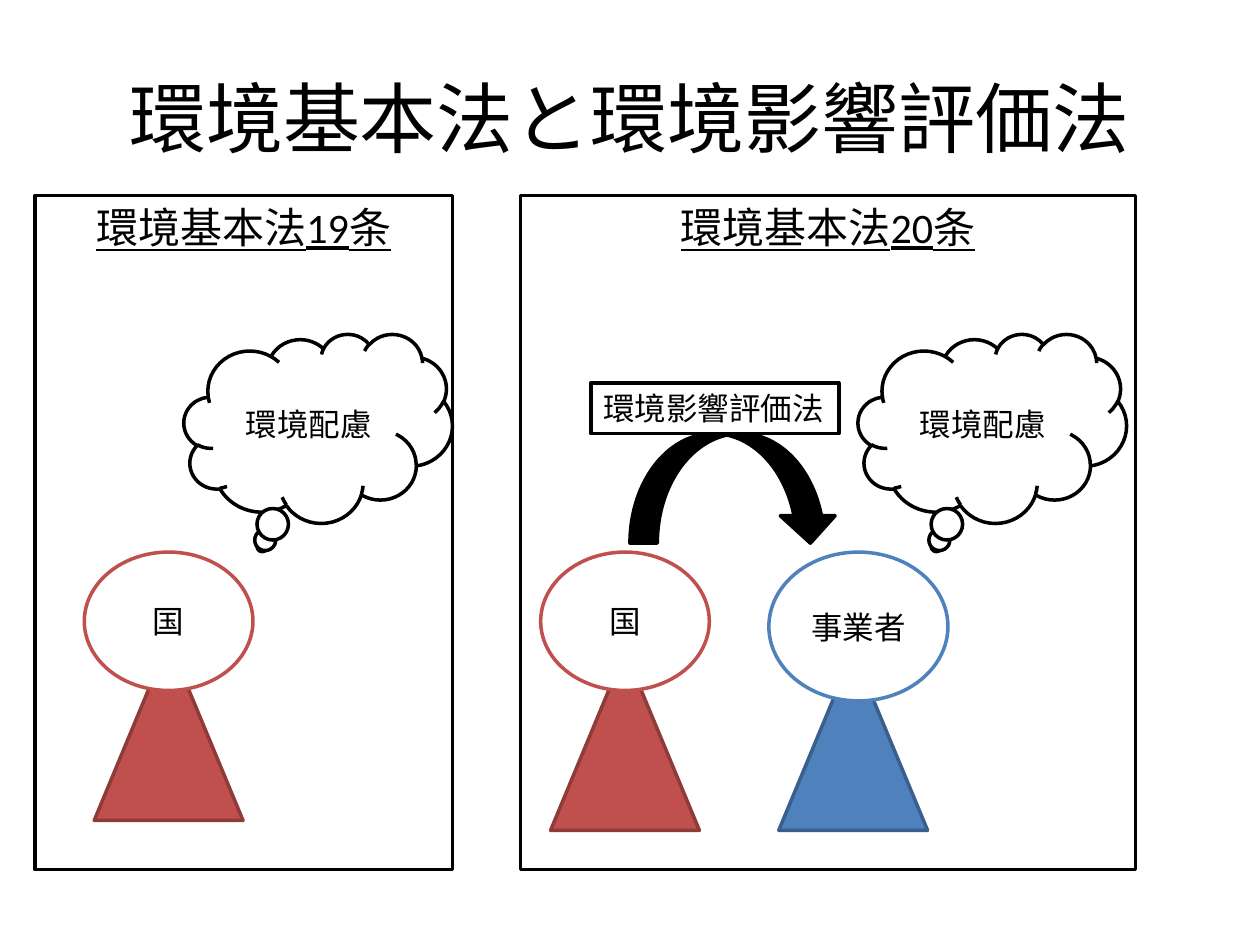
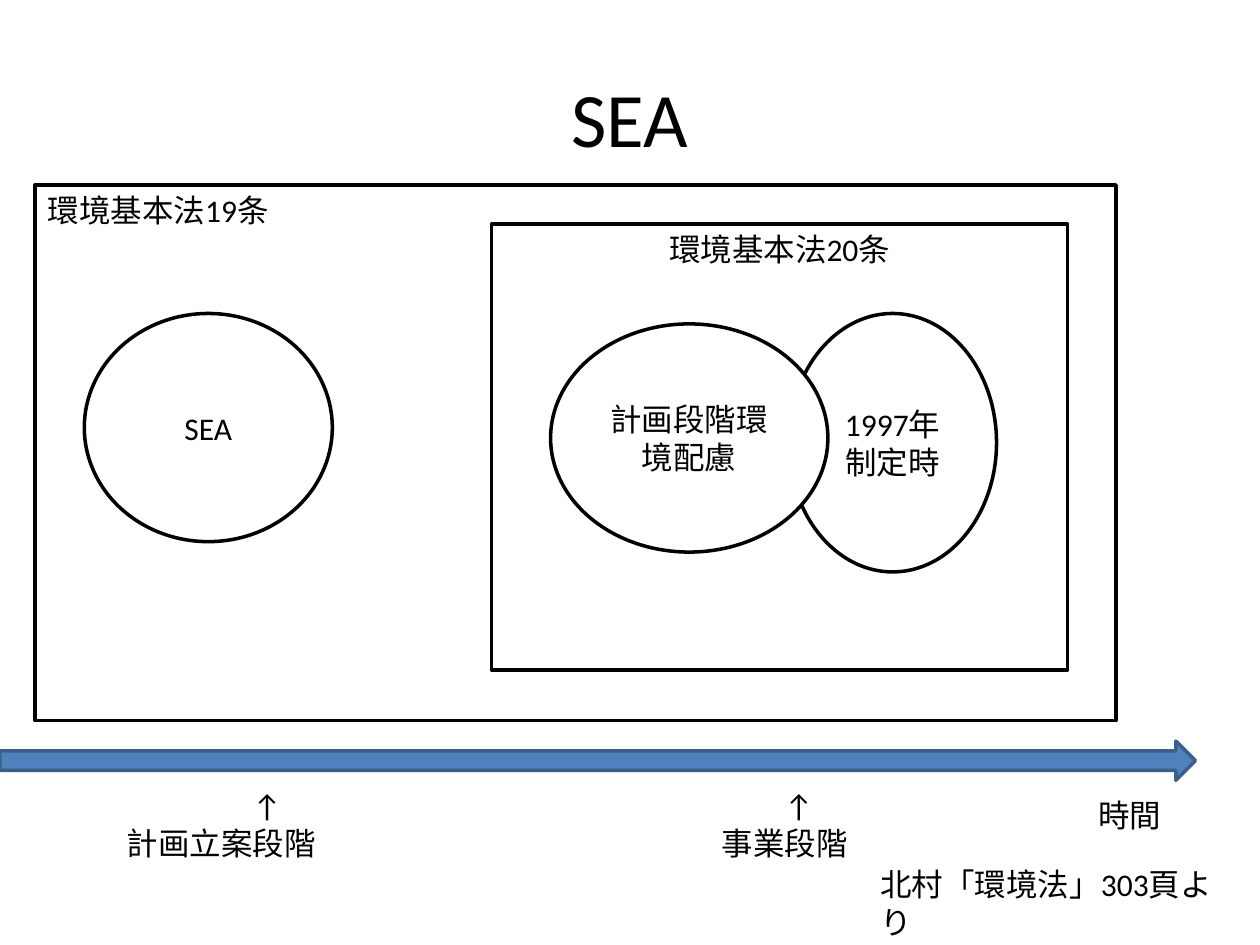
from pptx import Presentation
from pptx import util as u
from pptx.dml.color import RGBColor
from pptx.enum import shapes, text

Cm = u.Cm
Kind = shapes.MSO_SHAPE

# Shared colours and text style
BLACK = RGBColor(0x00, 0x00, 0x00)
WHITE = RGBColor(0xFF, 0xFF, 0xFF)
RED = RGBColor(0xC0, 0x50, 0x4D)
DARK_RED = RGBColor(0x8E, 0x3B, 0x39)
BLUE = RGBColor(0x4F, 0x81, 0xBD)
DARK_BLUE = RGBColor(0x3A, 0x5F, 0x8C)
FONT = "Calibri"

CENTER, LEFT = text.PP_ALIGN.CENTER, text.PP_ALIGN.LEFT
TOP, MIDDLE = text.MSO_ANCHOR.TOP, text.MSO_ANCHOR.MIDDLE
GROW = text.MSO_AUTO_SIZE.SHAPE_TO_FIT_TEXT


def write(sp, lines, size=18, align=CENTER, underline=None, **frame):
    """Fill a text frame, one paragraph per line."""
    tf = sp.text_frame
    frame = {"word_wrap": True, "vertical_anchor": MIDDLE} | frame
    for name, value in frame.items():
        setattr(tf, name, value)
    style = {"name": FONT, "size": u.Pt(size), "underline": underline}
    for i, line in enumerate(lines):
        p = tf.paragraphs[0] if i == 0 else tf.add_paragraph()
        p.alignment = align
        r = p.add_run()
        r.text = line
        for name, value in style.items():
            setattr(r.font, name, value)
        r.font.color.rgb = BLACK
    return tf


def add_shape(s, kind, box, fill=WHITE, line=BLACK):
    """Add a flat preset shape; fill=None leaves it see-through."""
    sp = s.shapes.add_shape(kind, *map(Cm, box))
    sp.shadow.inherit = False
    if fill is None:
        sp.fill.background()
    else:
        sp.fill.solid()
        sp.fill.fore_color.rgb = fill
    sp.line.color.rgb = line
    sp.line.width = u.Pt(2)
    return sp


def add_text(s, box, *lines, **style):
    sp = s.shapes.add_textbox(*map(Cm, box))
    return write(sp, lines, **style)


def add_note(s, box, *lines):
    return add_text(s, box, *lines, align=LEFT, vertical_anchor=TOP, auto_size=GROW)


def add_stage(s, x, width, label, indent):
    """Timeline label under an indented up arrow."""
    tf = add_note(s, (x, 15.72, width, 1.8), "↑", label)
    tf.paragraphs[0]._p.get_or_add_pPr().set("marL", str(Cm(indent)))


def add_panel(s, box, heading, **style):
    sp = add_shape(s, Kind.RECTANGLE, box, fill=None)
    write(sp, [heading], vertical_anchor=TOP, **style)


def add_ellipse(s, box, label, line=BLACK):
    write(add_shape(s, Kind.OVAL, box, line=line), [label])


def add_person(s, x, label, body_y, colour, edge, head=(3.4, 2.79)):
    """Triangular body with a labelled round head in front."""
    add_shape(s, Kind.FLOWCHART_EXTRACT, (x + 0.2, body_y, 3, 3.61), colour, edge)
    add_ellipse(s, (x, 11.13, *head), label, colour)


def add_thought(s, x):
    sp = add_shape(s, Kind.CLOUD_CALLOUT, (x, 6.73, 5.41, 3.81))
    write(sp, ["環境配慮"])


def new_slide(prs, title):
    s = prs.slides.add_slide(prs.slide_layouts[6])
    add_text(s, (1.27, 0.76, 22.86, 3.18), title, size=44)
    return s


def build_laws(prs):
    s = new_slide(prs, "環境基本法と環境影響評価法")

    # People and their thoughts
    add_person(s, 1.7, "国", 12.93, RED, DARK_RED)
    add_person(s, 10.9, "国", 13.13, RED, DARK_RED)
    add_person(s, 15.5, "事業者", 13.13, BLUE, DARK_BLUE, head=(3.61, 3))
    for x in (3.71, 17.3):
        add_thought(s, x)

    # Article panels
    for x, width, article in ((0.71, 8.41, 19), (10.49, 12.4, 20)):
        add_panel(s, (x, 3.94, width, 13.59), f"環境基本法{article}条",
                  size=24, underline=True)

    # Assessment law, from state to operator
    add_shape(s, Kind.CURVED_DOWN_ARROW, (12.7, 8.74, 4.19, 2.21), fill=BLACK)
    law = add_shape(s, Kind.RECTANGLE, (11.91, 7.72, 5, 1.02))
    write(law, ["環境影響評価法"], align=LEFT, vertical_anchor=TOP,
          word_wrap=False, auto_size=GROW)


def build_sea(prs):
    s = new_slide(prs, "SEA")

    # Assessment scopes
    add_ellipse(s, (15.9, 6.32, 4.19, 5.21), "1997年制定時")
    add_ellipse(s, (1.7, 6.32, 5, 4.6), "SEA")
    add_ellipse(s, (11.1, 6.53, 5.59, 4.6), "計画段階環境配慮")

    # Article panels
    add_panel(s, (9.91, 4.52, 11.61, 8.99), "環境基本法20条")
    add_panel(s, (0.71, 3.73, 21.79, 10.8), "環境基本法19条", align=LEFT)

    # Timeline
    add_shape(s, Kind.RIGHT_ARROW, (0, 14.94, 24.1, 0.79), BLUE, DARK_BLUE)
    add_stage(s, 2.31, 5, "計画立案段階", indent=2.54)
    add_stage(s, 14.3, 4.6, "事業段階", indent=1.27)
    add_note(s, (21.89, 15.93, 2.59, 1.02), "時間")

    # Citation
    add_note(s, (17.5, 17.32, 7.19, 1.02), "北村「環境法」303頁より")


def main():
    prs = Presentation()
    prs.slide_width, prs.slide_height = Cm(25.4), Cm(19.05)
    build_laws(prs)
    build_sea(prs)
    prs.save("out.pptx")


if __name__ == "__main__":
    main()
